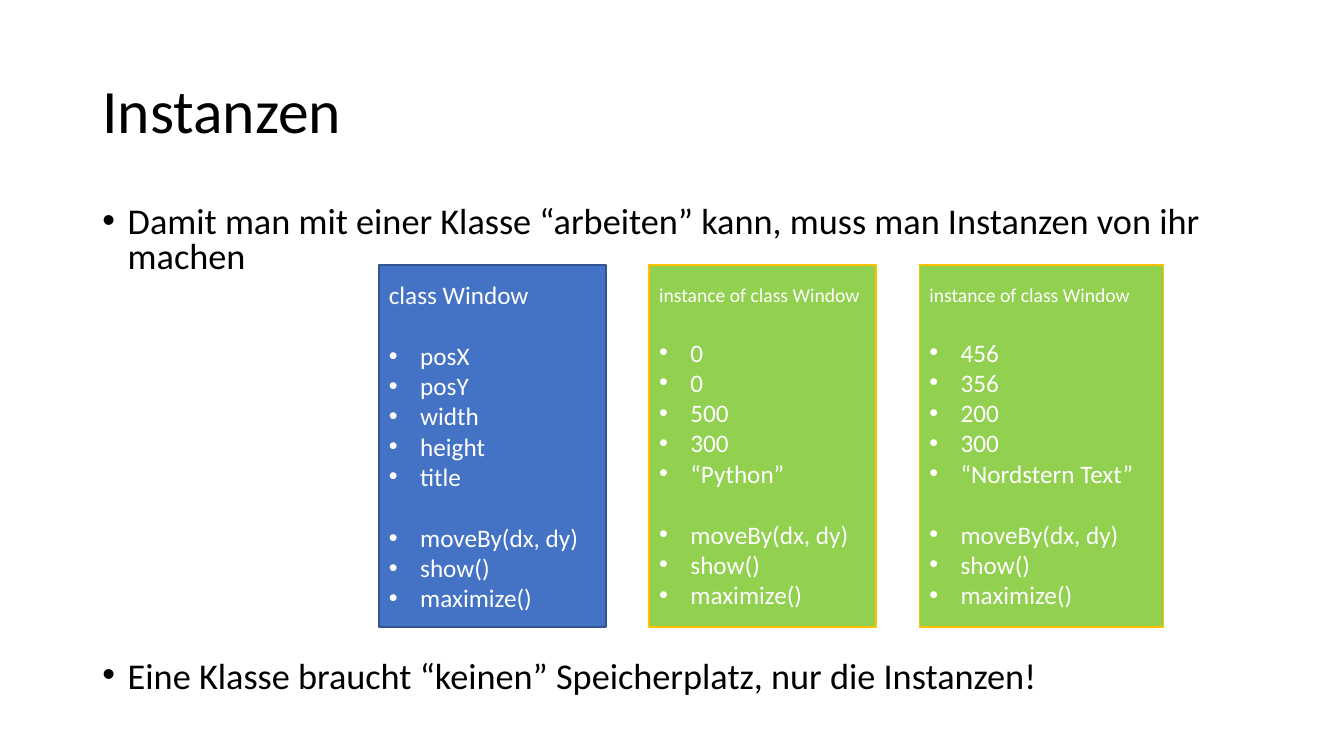
from dataclasses import dataclass

from lxml import etree
from pptx import Presentation
from pptx import util as u
from pptx.dml.color import RGBColor
from pptx.enum import shapes, text
from pptx.oxml.ns import qn


@dataclass(frozen=True)
class Theme:
    font: str = "Calibri"
    ink: str = "000000"
    card_ink: str = "FFFFFF"
    class_fill: str = "4472C4"
    class_line: str = "325491"
    instance_fill: str = "92D050"
    instance_line: str = "FFC000"
    title_size: float = 44
    body_size: float = 25.9
    card_size: float = 18
    caption_size: float = 14
    empty_line: float = 22


THEME = Theme()
METHODS = ["moveBy(dx, dy)", "show()", "maximize()"]
CARDS = [
    ("class Window", ["posX", "posY", "width", "height", "title"]),
    ("instance of class Window", ["0", "0", "500", "300", "“Python”"]),
    ("instance of class Window", ["456", "356", "200", "300", "“Nordstern Text”"]),
]
STATEMENTS = [
    "Damit man mit einer Klasse “arbeiten” kann, muss man Instanzen von ihr machen",
    "Eine Klasse braucht “keinen” Speicherplatz, nur die Instanzen!",
]


def add_bullet(paragraph, indent):
    properties = paragraph._p.get_or_add_pPr()
    properties.set("marL", str(int(indent)))
    properties.set("indent", str(-int(indent)))
    etree.SubElement(properties, qn("a:buFont")).set("typeface", "Arial")
    etree.SubElement(properties, qn("a:buChar")).set("char", "•")


def write_paragraph(frame, index, words, size, color, indent=None, before=0, spacing=1.0):
    paragraph = frame.add_paragraph() if index else frame.paragraphs[0]
    paragraph.alignment = text.PP_ALIGN.LEFT
    paragraph.line_spacing = spacing
    paragraph.space_before = u.Pt(before)
    if indent:
        add_bullet(paragraph, indent)
    run = paragraph.add_run()
    run.text = words
    run.font.name = THEME.font
    run.font.size = u.Pt(size)
    run.font.color.rgb = RGBColor.from_string(color)


def add_text_frame(slide, box, anchor):
    frame = slide.shapes.add_textbox(*box).text_frame
    frame.word_wrap = True
    frame.vertical_anchor = anchor
    return frame


def add_title(slide, box):
    frame = add_text_frame(slide, box, text.MSO_ANCHOR.MIDDLE)
    write_paragraph(frame, 0, "Instanzen", THEME.title_size, THEME.ink, spacing=0.9)


def add_statements(slide, box):
    """Write both statements, leaving room for the cards between them."""
    frame = add_text_frame(slide, box, text.MSO_ANCHOR.TOP)
    for index, (words, before) in enumerate(zip(STATEMENTS, (10, 275))):
        write_paragraph(frame, index, words, THEME.body_size, THEME.ink,
                        u.Cm(0.64), before, 0.8)


def add_card(slide, box, heading, values, is_class):
    card = slide.shapes.add_shape(shapes.MSO_SHAPE.RECTANGLE, *box)
    card.shadow.inherit = False
    fill = THEME.class_fill if is_class else THEME.instance_fill
    line = THEME.class_line if is_class else THEME.instance_line
    card.fill.solid()
    card.fill.fore_color.rgb = RGBColor.from_string(fill)
    card.line.color.rgb = RGBColor.from_string(line)
    card.line.width = u.Pt(1)
    frame = card.text_frame
    frame.word_wrap = True
    frame.vertical_anchor = text.MSO_ANCHOR.MIDDLE
    heading_size = THEME.card_size if is_class else THEME.caption_size
    write_paragraph(frame, 0, heading, heading_size, THEME.card_ink)
    group_starts = (1, 1 + len(values))
    for index, words in enumerate(values + METHODS, start=1):
        before = THEME.empty_line if index in group_starts else 0
        write_paragraph(frame, index, words, THEME.card_size, THEME.card_ink,
                        u.Cm(0.79), before)


def add_cards(slide, box):
    """Set the cards at an equal pitch; the last one reaches the right edge."""
    left, top, width, height = box
    pitch, card_width = u.Cm(6.81), u.Cm(5.72)
    last = len(CARDS) - 1
    for index, (heading, values) in enumerate(CARDS):
        offset = index * pitch
        this_width = width - offset if index == last else card_width
        add_card(slide, (left + offset, top, this_width, height),
                 heading, values, index == 0)


def main():
    presentation = Presentation()
    presentation.slide_width = u.Cm(33.87)
    presentation.slide_height = u.Cm(19.05)
    slide = presentation.slides.add_slide(presentation.slide_layouts[6])
    add_title(slide, (u.Cm(2.33), u.Cm(1.02), u.Cm(29.21), u.Cm(3.68)))
    add_statements(slide, (u.Cm(2.33), u.Cm(5.08), u.Cm(29.21), u.Cm(12.7)))
    add_cards(slide, (u.Cm(9.55), u.Cm(6.68), u.Cm(19.77), u.Cm(9.12)))
    presentation.save("out.pptx")


if __name__ == "__main__":
    main()
